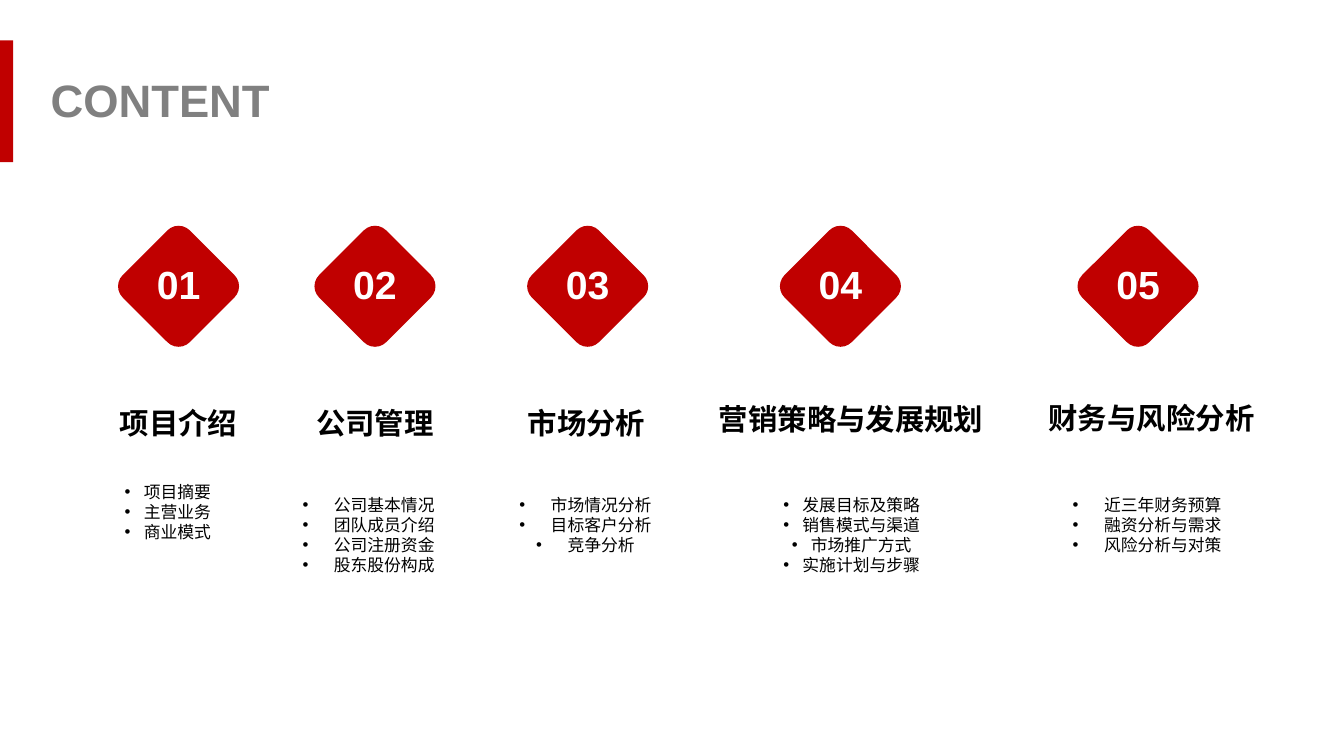
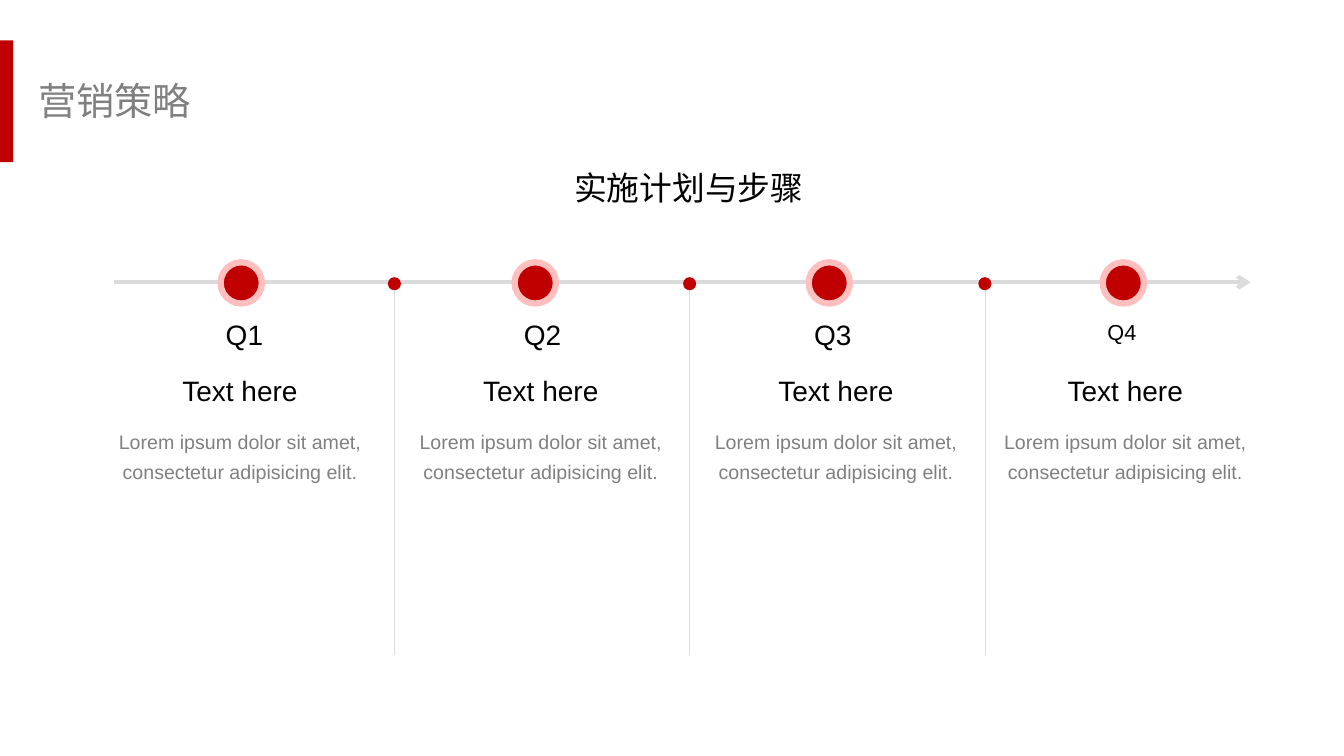
from dataclasses import dataclass

from lxml.etree import SubElement
from pptx import Presentation
from pptx.dml.color import RGBColor
from pptx.enum.shapes import MSO_CONNECTOR, MSO_SHAPE
from pptx.enum.text import MSO_ANCHOR, MSO_AUTO_SIZE, PP_ALIGN
from pptx.oxml.ns import qn
from pptx.util import Cm, Pt


# Shared look: colours, font and type sizes
@dataclass(frozen=True)
class Theme:
    font: str = "Arial"
    red: str = "C00000"
    pink: str = "FFBFBF"
    gray: str = "808080"
    pale: str = "DBDBDB"
    black: str = "000000"
    white: str = "FFFFFF"
    title: float = 32.4
    topic: float = 27.3
    lead: float = 23.4
    number: float = 28
    head: float = 21
    label: float = 20
    small: float = 15.5
    body: float = 14
    item: float = 12


THEME = Theme()
CENTER, LEFT = PP_ALIGN.CENTER, PP_ALIGN.LEFT
TOP, MIDDLE, BOTTOM = MSO_ANCHOR.TOP, MSO_ANCHOR.MIDDLE, MSO_ANCHOR.BOTTOM

# Agenda: diamond centre, heading (text, centre, width, bottom, spacing),
# list (left, top, width, indent), items
AGENDA = [
    (4.5, ("项目介绍", 4.5, 5.61, 11.23, 1.5), (1.98, 12.01, 4.5, 0.48),
     ["项目摘要", "主营业务", "商业模式"]),
    (9.45, ("公司管理", 9.45, 5.61, 11.23, 1.5), (7.04, 12.34, 4.5, 0.79),
     ["公司基本情况", "团队成员介绍", "公司注册资金", "股东股份构成"]),
    (14.81, ("市场分析", 14.78, 5.61, 11.23, 1.5), (12.7, 12.34, 4.11, 0.79),
     ["市场情况分析", "目标客户分析", "竞争分析"]),
    (21.18, ("营销策略与发展规划", 21.45, 7.34, 11.13, 1.3),
     (19.46, 12.34, 4.01, 0.48),
     ["发展目标及策略", "销售模式与渠道", "市场推广方式", "实施计划与步骤"]),
    (28.68, ("财务与风险分析", 29.02, 6.27, 11.1, 1.5),
     (26.7, 12.34, 4.42, 0.79),
     ["近三年财务预算", "融资分析与需求", "风险分析与对策"]),
]

# Quarters: label, label left, text centre, label size, label spacing
QUARTERS = [
    ("Q1", 5.44, 6.05, THEME.label, 1.0),
    ("Q2", 12.95, 13.63, THEME.label, 1.0),
    ("Q3", 20.27, 21.07, THEME.label, 1.0),
    ("Q4", 27.66, 28.36, THEME.small, 0.8),
]
LOREM = "Lorem ipsum dolor sit amet, consectetur adipisicing elit."


# Basic helpers
def apply(item, values):
    for name, value in values.items():
        setattr(item, name, value)


def color(code):
    return RGBColor.from_string(code)


def place(shape, box):
    names = ("left", "top", "width", "height")
    apply(shape, dict(zip(names, map(Cm, box))))


def write(shape, lines, size, ink=THEME.black, bold=False, align=CENTER,
          anchor=TOP, space=1.0):
    frame = shape.text_frame
    apply(frame, {"word_wrap": True, "auto_size": MSO_AUTO_SIZE.NONE,
                  "vertical_anchor": anchor, "text": "\n".join(lines)})
    for para in frame.paragraphs:
        apply(para, {"alignment": align, "line_spacing": space})
        for run in para.runs:
            apply(run.font, {"name": THEME.font, "size": Pt(size),
                             "bold": bold})
            run.font.color.rgb = color(ink)


def add_text(slide, box, lines, size, **style):
    shape = slide.shapes.add_textbox(*map(Cm, box))
    write(shape, lines, size, **style)
    return shape


def add_list(slide, box, items, indent):
    shape = add_text(slide, box, items, THEME.item)
    for para in shape.text_frame.paragraphs:
        props = para._p.get_or_add_pPr()
        props.set("marL", str(Cm(indent)))
        props.set("indent", str(-Cm(indent)))
        SubElement(props, qn("a:buFont"), typeface=THEME.font)
        SubElement(props, qn("a:buChar"), char="•")


def add_block(slide, kind, box, edge=None, turn=0):
    shape = slide.shapes.add_shape(kind, *map(Cm, box))
    apply(shape, {"rotation": turn})
    shape.shadow.inherit = False
    shape.fill.solid()
    shape.fill.fore_color.rgb = color(THEME.red)
    if edge:
        shape.line.color.rgb = color(edge)
        shape.line.width = Pt(4.5)
    else:
        shape.line.fill.background()


def add_dot(slide, mid, level, size, edge=None):
    box = (mid - size / 2, level - size / 2, size, size)
    add_block(slide, MSO_SHAPE.OVAL, box, edge)


def add_line(slide, ends, width, arrow=False):
    line = slide.shapes.add_connector(MSO_CONNECTOR.STRAIGHT, *map(Cm, ends))
    line.line.color.rgb = color(THEME.pale)
    line.line.width = Pt(width)
    if arrow:
        SubElement(line.line._get_or_add_ln(), qn("a:tailEnd"), type="arrow")
    SubElement(line._element.spPr, qn("a:effectLst"))


# Shared frame: title and red band
def add_slide(deck, title, box, size, **style):
    slide = deck.slides.add_slide(deck.slide_layouts.get_by_name("Title Only"))
    place(slide.shapes.title, box)
    write(slide.shapes.title, [title], size, ink=THEME.gray, **style)
    add_block(slide, MSO_SHAPE.RECTANGLE, (0, 1.02, 0.33, 3.07))
    return slide


def add_agenda(deck):
    slide = add_slide(deck, "CONTENT", (1.02, 1.02, 6.4, 2.31), THEME.title,
                      bold=True, align=PP_ALIGN.JUSTIFY, anchor=BOTTOM)
    side = 2.39
    for index, (mid, head, spot, items) in enumerate(AGENDA, 1):
        # Numbered diamond
        add_block(slide, MSO_SHAPE.ROUNDED_RECTANGLE,
                  (mid - side / 2, 6.02, side, side), turn=45)
        add_text(slide, (mid - 1.17, 6.43, 2.34, 1.57), [f"{index:02}"],
                 THEME.number, ink=THEME.white, bold=True)
        # Heading
        text, center, width, base, space = head
        add_text(slide, (center - width / 2, base - 1.8, width, 1.8), [text],
                 THEME.head, bold=True, anchor=BOTTOM, space=space)
        # Bullets
        left, top, width, indent = spot
        add_list(slide, (left, top, width, 0.25 + 0.51 * len(items)),
                 items, indent)


def add_plan(deck):
    slide = add_slide(deck, "营销策略", (0.71, 1.83, 8.92, 1.45), THEME.topic,
                      align=LEFT)
    add_text(slide, (12.9, 4.09, 8.92, 1.27), ["实施计划与步骤"], THEME.lead)

    # Time axis with dividers between the quarters
    add_line(slide, (2.87, 7.11, 31.52, 7.11), 3, arrow=True)
    for index in range(len(QUARTERS) - 1):
        mid = 9.94 + 7.44 * index
        add_line(slide, (mid, 7.3, mid, 16.5), 0.5)
        add_dot(slide, mid, 7.15, 0.33)

    # Quarters
    for index, (label, left, mid, size, space) in enumerate(QUARTERS):
        add_dot(slide, 6.08 + 7.41 * index, 7.13, 1.04, THEME.pink)
        add_text(slide, (left, 7.87, 1.6, 1.12), [label], size,
                 align=LEFT, anchor=MIDDLE, space=space)
        add_text(slide, (mid - 3.34, 9.27, 6.68, 1.12), ["Text here"],
                 THEME.label, anchor=MIDDLE)
        add_text(slide, (mid - 3.39, 10.52, 6.78, 1.8), [LOREM], THEME.body,
                 ink=THEME.gray, space=1.3)


def main():
    deck = Presentation()
    apply(deck, {"slide_width": Cm(33.87), "slide_height": Cm(19.05)})
    add_agenda(deck)
    add_plan(deck)
    deck.save("out.pptx")


if __name__ == "__main__":
    main()
